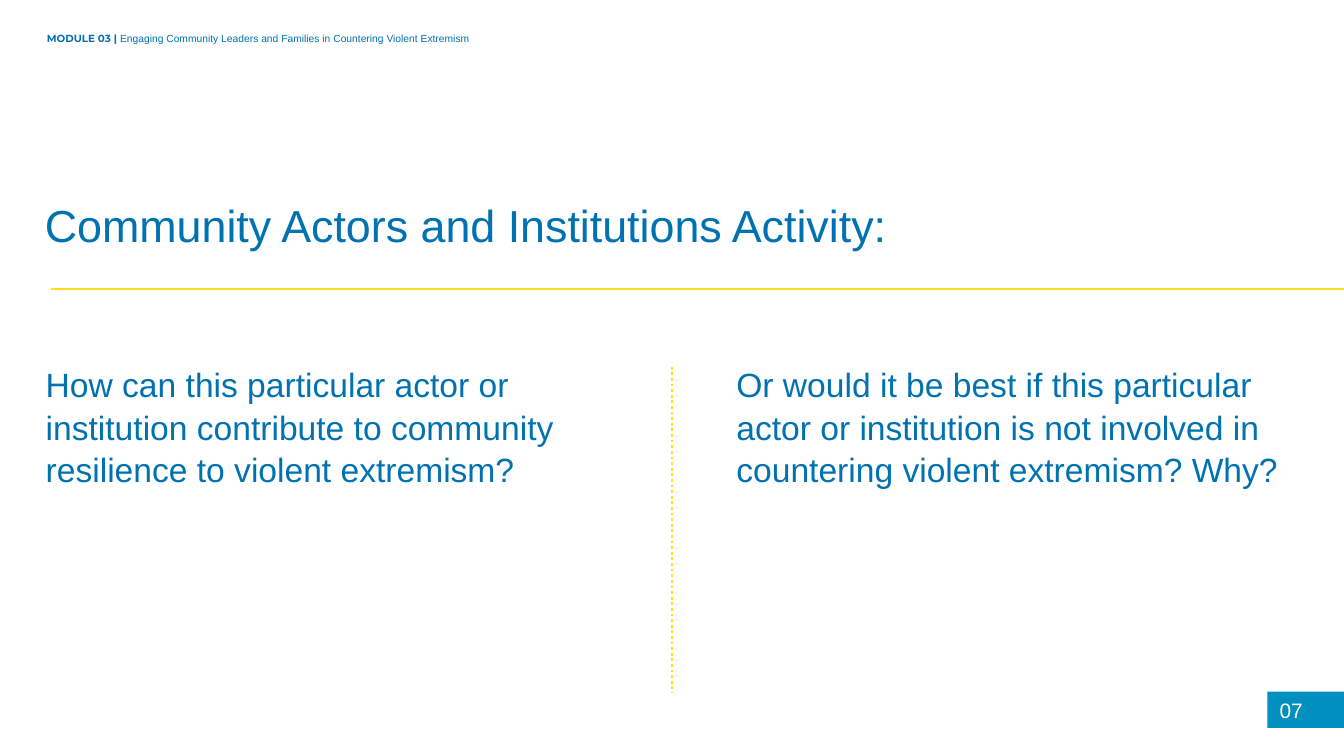
from dataclasses import dataclass

import pptx
import pptx.dml.color
import pptx.enum.dml
import pptx.enum.shapes
import pptx.enum.text
import pptx.oxml.ns
import pptx.util
from lxml import etree
from pptx.util import Pt

BLUE = "0072B1"
BADGE_BLUE = "008FBE"
YELLOW = "FFE01E"
WHITE = "FFFFFF"
SLIDE_WIDTH = 720
SLIDE_HEIGHT = 405
QUESTION_TOP = 196.5


@dataclass
class Span:
    text: str
    font: str = "Arial"
    bold: bool = False


@dataclass
class Question:
    text: str
    left: float
    width: float


QUESTIONS = [
    Question("How can this particular actor or institution contribute to "
             "community resilience to violent extremism?", 24.5, 326),
    Question("Or would it be best if this particular actor or institution is not "
             "involved in countering violent extremism? Why?", 394.5, 301),
]
HEADER = [
    Span("MODULE 03 | ", "Montserrat", True),
    Span("Engaging Community Leaders and Families in Countering Violent Extremism"),
]


def colour(value: str) -> pptx.dml.color.RGBColor:
    return pptx.dml.color.RGBColor.from_string(value)


def add_text(page, spans: list[Span], *, left: float, top: float, width: float,
             height: float, size: float, ink: str = BLUE, inset: bool = False,
             line_spacing: float = 1.0) -> None:
    """Add one paragraph; without insets the text sits at the box bottom."""
    box = page.shapes.add_textbox(Pt(left), Pt(top), Pt(width), Pt(height))
    frame = box.text_frame
    frame.word_wrap = True
    if not inset:
        frame.margin_left = frame.margin_right = 0
        frame.margin_top = frame.margin_bottom = 0
        frame.vertical_anchor = pptx.enum.text.MSO_ANCHOR.BOTTOM
    para = frame.paragraphs[0]
    para.line_spacing = line_spacing
    for span in spans:
        run = para.add_run()
        run.text = span.text
        run.font.name = span.font
        run.font.size = Pt(size)
        run.font.bold = span.bold
        run.font.color.rgb = colour(ink)


def add_rule(page, start: tuple[float, float], end: tuple[float, float],
             weight: float, dotted: bool = False) -> None:
    rule = page.shapes.add_connector(
        pptx.enum.shapes.MSO_CONNECTOR.STRAIGHT,
        Pt(start[0]), Pt(start[1]), Pt(end[0]), Pt(end[1]))
    rule.line.color.rgb = colour(YELLOW)
    rule.line.width = Pt(weight)
    if dotted:
        rule.line.dash_style = pptx.enum.dml.MSO_LINE.ROUND_DOT
    etree.SubElement(rule._element.spPr, pptx.oxml.ns.qn("a:effectLst"))


def add_page_number(page, number: str) -> None:
    badge = page.shapes.add_shape(
        pptx.enum.shapes.MSO_SHAPE.RECTANGLE,
        Pt(679), Pt(370.5), Pt(SLIDE_WIDTH - 679), Pt(19.5))
    badge.shadow.inherit = False
    badge.fill.solid()
    badge.fill.fore_color.rgb = colour(BADGE_BLUE)
    badge.line.fill.background()
    add_text(page, [Span(number)], left=685.5, top=373.5, width=34.5, height=13.5,
             size=11.2, ink=WHITE)


def main() -> None:
    deck = pptx.Presentation()
    deck.slide_width = Pt(SLIDE_WIDTH)
    deck.slide_height = Pt(SLIDE_HEIGHT)
    page = deck.slides.add_slide(deck.slide_layouts[6])

    add_rule(page, (27.4, 154.7), (SLIDE_WIDTH, 154.7), 1.25)
    add_text(page, [Span("Community Actors and Institutions Activity:")],
             left=24, top=106, width=537, height=28.5, size=24)
    for question in QUESTIONS:
        add_text(page, [Span(question.text)], left=question.left, top=QUESTION_TOP,
                 width=question.width, height=65.5, size=18, line_spacing=1.05)
    middle = SLIDE_WIDTH / 2
    add_rule(page, (middle, QUESTION_TOP), (middle, 371.5), 1.5, dotted=True)
    add_page_number(page, "07")
    add_text(page, HEADER, left=18, top=13.7, width=305, height=11.5, size=5.5,
             inset=True)
    deck.save("out.pptx")


if __name__ == "__main__":
    main()
